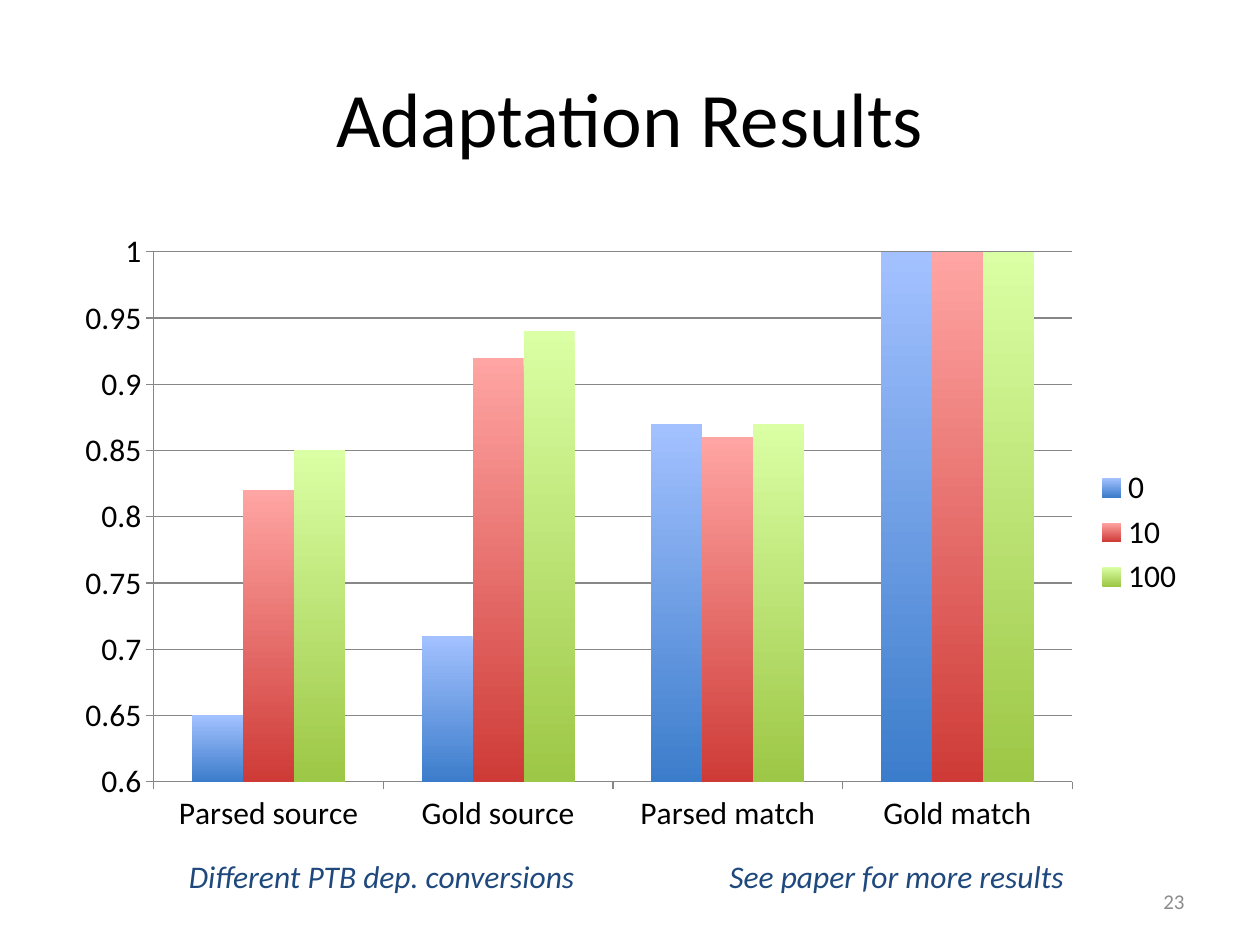
from dataclasses import dataclass

import pptx
import pptx.chart.data
import pptx.dml.color
import pptx.enum.chart
import pptx.enum.text
import pptx.oxml
import pptx.oxml.ns
import pptx.util

EMU_PER_PX = 9144  # 100 px to the inch
FONT = "Calibri"
BLACK, GRAY, NAVY = "000000", "8C8C8C", "1F497D"
AXIS_GRAY = "878787"
ALIGN = pptx.enum.text.PP_ALIGN
ANCHOR = pptx.enum.text.MSO_ANCHOR


@dataclass
class Label:
    text: str
    left: int
    top: int
    width: int
    height: int
    size: int
    color: str
    align: ALIGN = ALIGN.LEFT
    anchor: ANCHOR = ANCHOR.TOP
    italic: bool = False
    wrap: bool = True


@dataclass
class Series:
    name: str
    values: tuple[float, ...]
    top_color: str
    bottom_color: str


LABELS = [
    Label("Adaptation Results", 50, 30, 900, 125, 44, BLACK, ALIGN.CENTER, ANCHOR.MIDDLE),
    Label("23", 717, 695, 233, 40, 12, GRAY, ALIGN.RIGHT, ANCHOR.MIDDLE),
    Label("See paper for more results", 569, 675, 295, 40, 18, NAVY, italic=True, wrap=False),
    Label("Different PTB dep. conversions", 140, 675, 336, 40, 18, NAVY, italic=True, wrap=False),
]
CATEGORIES = ["Parsed source", "Gold source", "Parsed match", "Gold match"]
SERIES = [
    Series("0", (0.65, 0.71, 0.87, 1), "A3C1FF", "3C7DCB"),
    Series("10", (0.82, 0.92, 0.86, 1), "FFA5A3", "CE3B37"),
    Series("100", (0.85, 0.94, 0.87, 1), "DAFFA4", "9DC746"),
]


def px(length: int) -> pptx.util.Emu:
    return pptx.util.Emu(length * EMU_PER_PX)


def rgb(color: str) -> pptx.dml.color.RGBColor:
    return pptx.dml.color.RGBColor.from_string(color)


def style_font(font, size: int, color: str, italic: bool = False) -> None:
    font.name = FONT
    font.size = pptx.util.Pt(size)
    font.italic = italic
    font.color.rgb = rgb(color)


def style_line(line) -> None:
    line.color.rgb = rgb(AXIS_GRAY)
    line.width = pptx.util.Pt(0.75)


def add_label(slide, label: Label) -> None:
    shape = slide.shapes.add_textbox(
        px(label.left), px(label.top), px(label.width), px(label.height))
    text_frame = shape.text_frame
    text_frame.text = label.text
    text_frame.word_wrap = label.wrap
    text_frame.vertical_anchor = label.anchor
    if not label.wrap:
        text_frame.auto_size = pptx.enum.text.MSO_AUTO_SIZE.SHAPE_TO_FIT_TEXT
    paragraph = text_frame.paragraphs[0]
    paragraph.alignment = label.align
    style_font(paragraph.runs[0].font, label.size, label.color, label.italic)


def place_plot(chart, x: float, y: float, width: float, height: float) -> None:
    """Fix the inner plot area, as fractions of the chart."""
    plot_area = chart.plots[0]._element.getparent()
    for old_layout in plot_area.findall(pptx.oxml.ns.qn("c:layout")):
        plot_area.remove(old_layout)
    plot_area.insert(0, pptx.oxml.parse_xml(
        f'<c:layout {pptx.oxml.ns.nsdecls("c")}><c:manualLayout>'
        '<c:layoutTarget val="inner"/><c:xMode val="edge"/><c:yMode val="edge"/>'
        f'<c:x val="{x}"/><c:y val="{y}"/><c:w val="{width}"/><c:h val="{height}"/>'
        '</c:manualLayout></c:layout>'))


def add_results_chart(slide) -> None:
    chart_data = pptx.chart.data.CategoryChartData()
    chart_data.categories = CATEGORIES
    for series in SERIES:
        chart_data.add_series(series.name, series.values)
    chart = slide.shapes.add_chart(
        pptx.enum.chart.XL_CHART_TYPE.COLUMN_CLUSTERED,
        px(50), px(175), px(900), px(495), chart_data).chart
    style_font(chart.font, 18, BLACK)
    chart.has_title = False
    chart.has_legend = True
    chart.legend.position = pptx.enum.chart.XL_LEGEND_POSITION.RIGHT
    chart.legend.include_in_layout = False

    for axis in (chart.category_axis, chart.value_axis):
        axis.major_tick_mark = pptx.enum.chart.XL_TICK_MARK.OUTSIDE
        axis.minor_tick_mark = pptx.enum.chart.XL_TICK_MARK.NONE
        style_line(axis.format.line)
    value_axis = chart.value_axis
    value_axis.minimum_scale, value_axis.maximum_scale = 0.6, 1
    value_axis.major_unit = 0.05
    value_axis.has_major_gridlines = True
    style_line(value_axis.major_gridlines.format.line)
    value_axis.tick_labels.number_format = "General"
    value_axis.tick_labels.number_format_is_linked = False

    plot = chart.plots[0]
    plot.vary_by_categories = False
    plot.gap_width = 150
    plot.overlap = 0
    for bars, series in zip(plot.series, SERIES):
        fill = bars.format.fill
        fill.gradient()
        fill.gradient_angle = 270
        for stop, color in zip(fill.gradient_stops, (series.top_color, series.bottom_color)):
            stop.color.rgb = rgb(color)
        bars.format.line.fill.background()
    place_plot(chart, 0.08, 0.05, 0.81, 0.85)


def main() -> None:
    presentation = pptx.Presentation()
    presentation.slide_width, presentation.slide_height = px(1000), px(750)
    slide = presentation.slides.add_slide(presentation.slide_layouts[6])
    add_results_chart(slide)
    for label in LABELS:
        add_label(slide, label)
    presentation.save("out.pptx")


if __name__ == "__main__":
    main()
